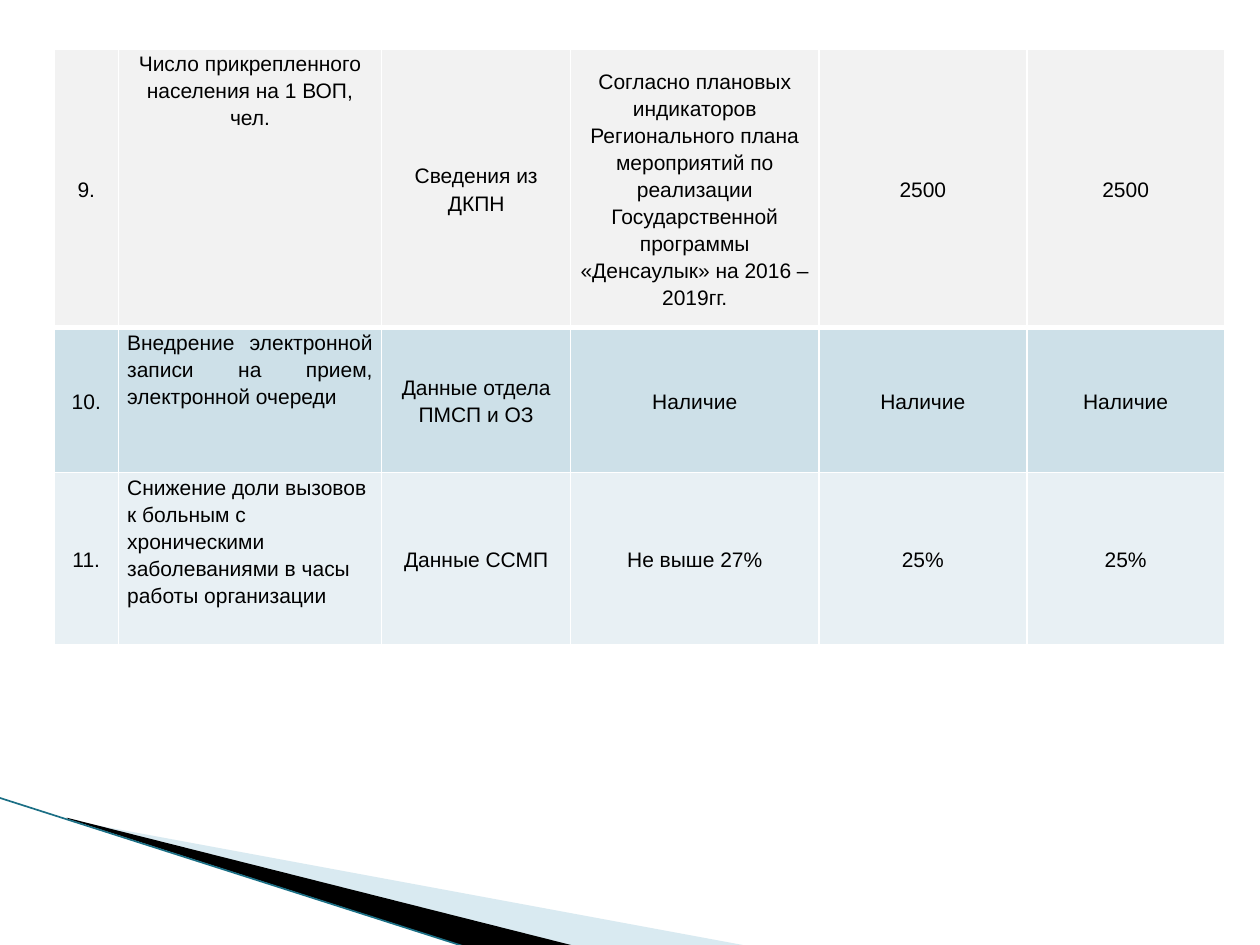
from dataclasses import dataclass

from lxml.etree import SubElement
from pptx import Presentation
from pptx.dml.color import RGBColor
from pptx.enum.shapes import MSO_CONNECTOR as Connector
from pptx.enum.text import MSO_ANCHOR as Anchor, PP_ALIGN as Align
from pptx.oxml.ns import qn
from pptx.util import Inches, Pt


@dataclass(frozen=True)
class Theme:
    font: str = "Arial"
    text_size: float = 12
    line_spacing: float = 1.15
    text: str = "000000"
    border: str = "FFFFFF"
    row_fills: tuple = ("F2F2F2", "CDE0E8", "E8F0F4")
    pale_wedge: str = "A0CBDC"
    dark_wedge: str = "000000"
    edge_line: str = "1B6F85"


THEME = Theme()

COLUMN_WIDTHS = (0.51, 2.09, 1.5, 1.97, 1.65, 1.57)
ROW_HEIGHTS = (2.21, 1.15, 1.37)
INDICATOR_COLUMN = 1
INDICATOR_ALIGNS = (Align.CENTER, Align.JUSTIFY, Align.LEFT)
INDICATORS = (
    ("9.", "Число прикрепленного населения на 1 ВОП, чел.", "Сведения из ДКПН",
     "Согласно плановых индикаторов Регионального плана мероприятий по "
     "реализации Государственной программы «Денсаулык» на 2016 – 2019гг.",
     "2500", "2500"),
    ("10.", "Внедрение электронной записи на прием, электронной очереди",
     "Данные отдела ПМСП и ОЗ", "Наличие", "Наличие", "Наличие"),
    ("11.", "Снижение доли вызовов к больным с хроническими заболеваниями "
     "в часы работы организации",
     "Данные ССМП", "Не выше 27%", "25%", "25%"),
)


def color(value):
    return RGBColor.from_string(value)


def add_wedge(slide, points, fill, opacity=100):
    corners = [(Inches(x), Inches(y)) for x, y in points]
    builder = slide.shapes.build_freeform(*corners[0])
    builder.add_line_segments(corners[1:], close=True)
    shape = builder.convert_to_shape()
    shape.shadow.inherit = False
    shape.line.fill.background()
    shape.fill.solid()
    shape.fill.fore_color.rgb = color(fill)
    if opacity < 100:
        fill_color = shape.fill._xPr.find(qn("a:solidFill"))[0]
        SubElement(fill_color, qn("a:alpha"), val=str(opacity * 1000))


def add_edge_line(slide, start, end):
    ends = [Inches(value) for value in (*start, *end)]
    line = slide.shapes.add_connector(Connector.STRAIGHT, *ends)
    line.line.color.rgb = color(THEME.edge_line)
    line.line.width = Pt(0.95)
    SubElement(line._element.spPr, qn("a:effectLst"))


def add_borders(cell, bottom_width, top_width):
    properties = cell._tc.get_or_add_tcPr()
    widths = {"a:lnL": 1, "a:lnR": 1, "a:lnT": top_width, "a:lnB": bottom_width}
    for side, width in widths.items():
        border = SubElement(properties, qn(side), w=str(Pt(width)))
        fill = SubElement(border, qn("a:solidFill"))
        SubElement(fill, qn("a:srgbClr"), val=THEME.border)


def fill_cell(cell, text, fill, align, anchor):
    cell.fill.solid()
    cell.fill.fore_color.rgb = color(fill)
    cell.vertical_anchor = anchor
    cell.margin_left = cell.margin_right = Inches(0.07)
    cell.margin_top = cell.margin_bottom = 0
    paragraph = cell.text_frame.paragraphs[0]
    paragraph.alignment = align
    paragraph.line_spacing = THEME.line_spacing
    run = paragraph.add_run()
    run.text = text
    run.font.name = THEME.font
    run.font.size = Pt(THEME.text_size)
    run.font.color.rgb = color(THEME.text)


def add_indicator_table(slide):
    table = slide.shapes.add_table(
        len(ROW_HEIGHTS), len(COLUMN_WIDTHS), Inches(0.43), Inches(0.39),
        Inches(sum(COLUMN_WIDTHS)), Inches(sum(ROW_HEIGHTS))).table
    table.first_row = table.horz_banding = False
    for column, width in zip(table.columns, COLUMN_WIDTHS):
        column.width = Inches(width)
    for row, height in zip(table.rows, ROW_HEIGHTS):
        row.height = Inches(height)

    for row_index, texts in enumerate(INDICATORS):
        # A thick rule separates the first row from the others
        bottom_width = 3 if row_index == 0 else 1
        top_width = 3 if row_index == 1 else 1
        for column_index, text in enumerate(texts):
            cell = table.cell(row_index, column_index)
            add_borders(cell, bottom_width, top_width)
            align, anchor = Align.CENTER, Anchor.MIDDLE
            if column_index == INDICATOR_COLUMN:
                align, anchor = INDICATOR_ALIGNS[row_index], Anchor.TOP
            fill_cell(cell, text, THEME.row_fills[row_index], align, anchor)


def main():
    presentation = Presentation()
    presentation.slide_width = Inches(10)
    presentation.slide_height = Inches(7.5)
    slide = presentation.slides.add_slide(presentation.slide_layouts[6])

    # Corner decoration
    add_wedge(slide, [(0.55, 6.51), (5.95, 7.51), (4.56, 7.51), (0.55, 6.5)],
              THEME.pale_wedge, opacity=40)
    add_wedge(slide, [(0.53, 6.49), (4.57, 7.51), (3.72, 7.52), (0.54, 6.5)],
              THEME.dark_wedge)
    add_edge_line(slide, (-0.01, 6.33), (3.71, 7.52))

    # Indicators
    add_indicator_table(slide)

    presentation.save("out.pptx")


if __name__ == "__main__":
    main()
